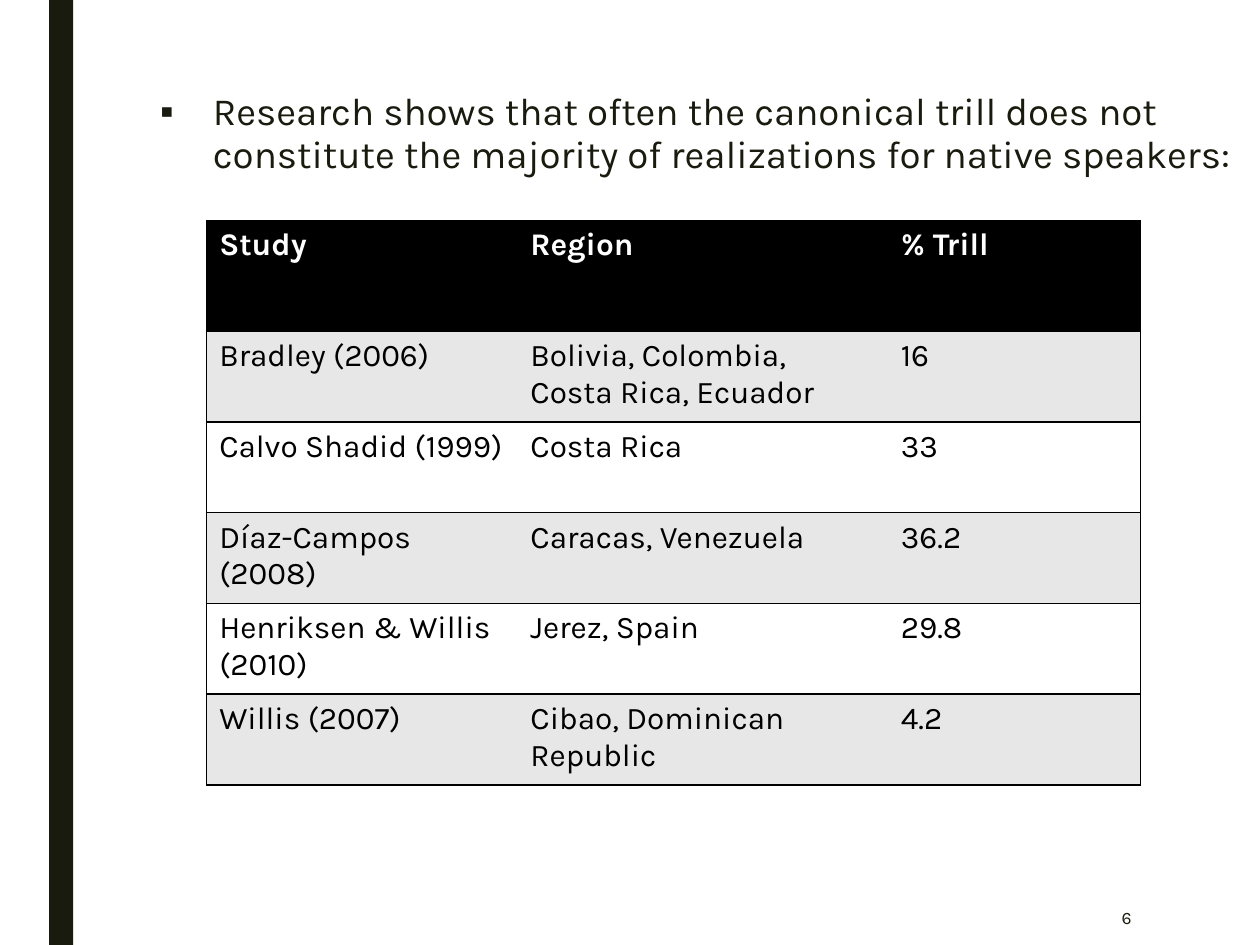
from lxml.etree import SubElement
from pptx import Presentation
from pptx.dml.color import RGBColor
from pptx.enum.shapes import MSO_SHAPE
from pptx.enum.text import MSO_ANCHOR, MSO_AUTO_SIZE, PP_ALIGN
from pptx.oxml.ns import qn
from pptx.util import Inches, Pt

FONT = "Karla"
DARK, BLACK, WHITE, GRAY = "191B0E", "000000", "FFFFFF", "E7E7E7"
COLUMN_WIDTHS = [2.47, 2.94, 2]
HEADER_HEIGHT, ROW_HEIGHT = 0.88, 0.72
STUDIES = [
    ("Study", "Region", "% Trill"),
    ("Bradley (2006)", "Bolivia, Colombia, Costa Rica, Ecuador", "16"),
    ("Calvo Shadid (1999)", "Costa Rica", "33"),
    ("Díaz-Campos (2008)", "Caracas, Venezuela", "36.2"),
    ("Henriksen & Willis (2010)", "Jerez, Spain", "29.8"),
    ("Willis (2007)", "Cibao, Dominican Republic", "4.2"),
]


def color(hex_string):
    return RGBColor.from_string(hex_string)


def box(left, top, width, height):
    return [Inches(length) for length in (left, top, width, height)]


def style(paragraph, size, hex_string, bold=False):
    font = paragraph.font
    font.name, font.size, font.bold = FONT, Pt(size), bold
    font.color.rgb = color(hex_string)


def add_side_bar(slide):
    bar = slide.shapes.add_shape(MSO_SHAPE.RECTANGLE, *box(0.39, 0, 0.19, 7.5))
    bar.shadow.inherit = False
    bar.fill.solid()
    bar.fill.fore_color.rgb = color(DARK)
    bar.line.fill.background()


def add_slide_number(slide, number):
    text_box = slide.shapes.add_textbox(*box(7.77, 7.06, 1.31, 0.44))
    frame = text_box.text_frame
    frame.word_wrap = True
    frame.vertical_anchor = MSO_ANCHOR.MIDDLE
    paragraph = frame.paragraphs[0]
    paragraph.text = number
    paragraph.alignment = PP_ALIGN.RIGHT
    style(paragraph, 10, DARK)


def fill_body(body, text):
    body.left, body.top, body.width, body.height = box(1.17, 0.67, 8.83, 5.32)
    frame = body.text_frame
    frame.auto_size = MSO_AUTO_SIZE.NONE
    frame.vertical_anchor = MSO_ANCHOR.TOP
    paragraph = frame.paragraphs[0]
    paragraph.text = text
    paragraph.line_spacing = 0.94
    paragraph.space_before, paragraph.space_after = Pt(0), Pt(2)
    properties = paragraph._p.get_or_add_pPr()
    properties.set("marL", str(Inches(0.42)))
    properties.set("indent", str(-Inches(0.42)))
    SubElement(properties, qn("a:buFont"), typeface="Arial")
    SubElement(properties, qn("a:buChar"), char="▪")
    style(paragraph, 22, DARK)


def set_borders(cell, visible_sides):
    """Draw the named sides (L, R, T, B) in black and clear the others."""
    properties = cell._tc.get_or_add_tcPr()
    for side in "LRTB":
        line = SubElement(properties, qn(f"a:ln{side}"), w=str(Pt(1)))
        if side in visible_sides:
            fill = SubElement(line, qn("a:solidFill"))
            SubElement(fill, qn("a:srgbClr"), val=BLACK)
        else:
            SubElement(line, qn("a:noFill"))


def add_study_table(slide):
    height = HEADER_HEIGHT + ROW_HEIGHT * (len(STUDIES) - 1)
    frame = slide.shapes.add_table(len(STUDIES), len(COLUMN_WIDTHS),
                                   *box(1.64, 1.75, sum(COLUMN_WIDTHS), height))
    table = frame.table
    table.first_row = table.horz_banding = False
    for column, width in zip(table.columns, COLUMN_WIDTHS):
        column.width = Inches(width)
    for row_index, values in enumerate(STUDIES):
        is_header = row_index == 0
        table.rows[row_index].height = Inches(HEADER_HEIGHT if is_header else ROW_HEIGHT)
        background = BLACK if is_header else (WHITE, GRAY)[row_index % 2]
        for column_index, (value, outer_side) in enumerate(zip(values, ("L", "", "R"))):
            cell = table.cell(row_index, column_index)
            set_borders(cell, "TB" + outer_side)
            cell.fill.solid()
            cell.fill.fore_color.rgb = color(background)
            cell.text = value
            style(cell.text_frame.paragraphs[0], 18,
                  WHITE if is_header else BLACK, bold=is_header)


def main():
    presentation = Presentation()
    presentation.slide_width, presentation.slide_height = Inches(10), Inches(7.5)
    slide = presentation.slides.add_slide(presentation.slide_layouts[1])
    title = slide.shapes.title.element
    title.getparent().remove(title)
    add_side_bar(slide)
    add_slide_number(slide, "6")
    fill_body(slide.placeholders[1],
              "Research shows that often the canonical trill does not "
              "constitute the majority of realizations for native speakers:")
    add_study_table(slide)
    presentation.save("out.pptx")


if __name__ == "__main__":
    main()
